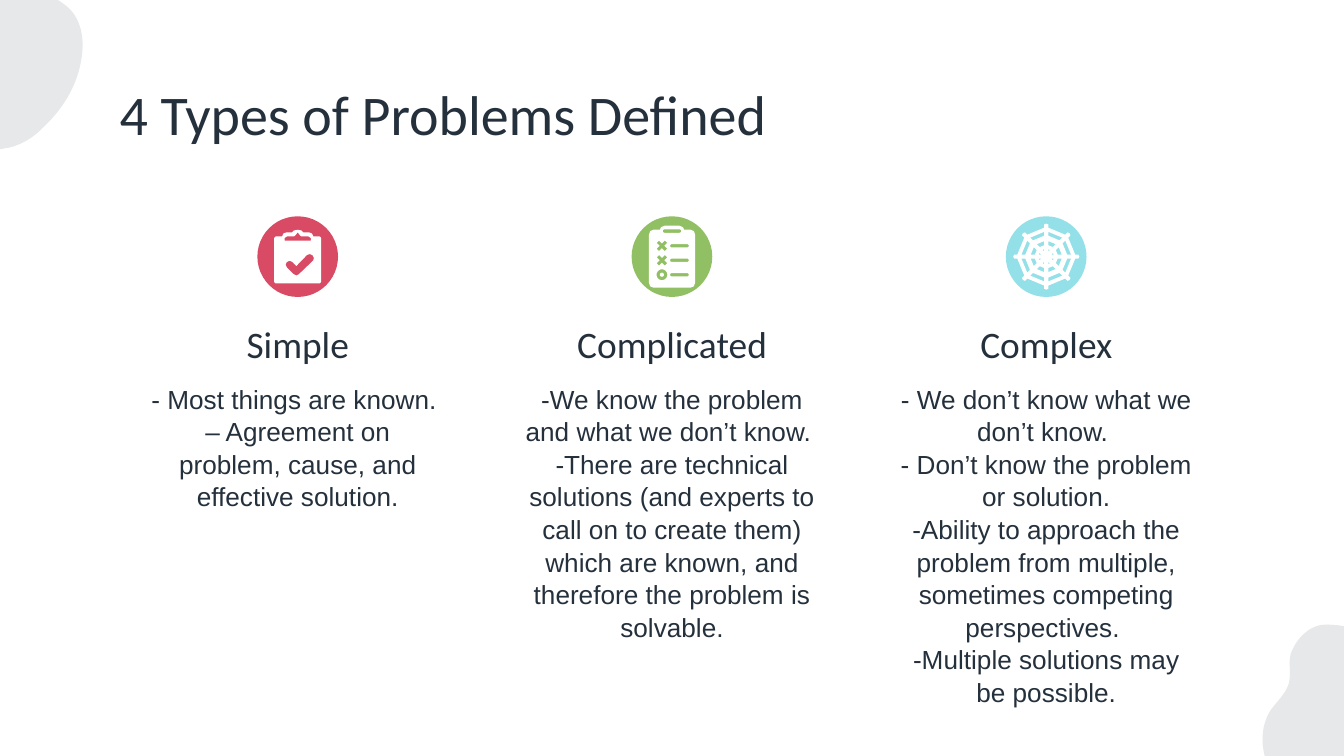
import math

import lxml.etree
import pptx
import pptx.dml.color
import pptx.enum.shapes
import pptx.enum.text
import pptx.oxml.ns
import pptx.util

Pt = pptx.util.Pt
ALIGN = pptx.enum.text.PP_ALIGN
ANCHOR = pptx.enum.text.MSO_ANCHOR

COLORS = {"ink": "24303C", "white": "FFFFFF", "simple": "D94A64",
          "complicated": "91BF63", "complex": "93E0E8"}

# Column grid
CENTER, STEP, COLUMN_WIDTH = 360, 200.5, 171.4
ICON_Y, ICON_SIZE = 137.5, 43.2

TITLE = {"size": 30, "font": "Calibri", "align": ALIGN.LEFT, "anchor": ANCHOR.TOP}
HEADING = {"size": 20, "font": "Calibri", "align": ALIGN.CENTER, "anchor": ANCHOR.BOTTOM}
BODY = {"size": 14, "font": "Arial", "align": ALIGN.CENTER, "anchor": ANCHOR.TOP,
        "spacing": 1.04}

# Corner blobs: a start point, then cubic curves; the corner closes each one
BOTTOM_BLOB = [(720, 335.5), [
    [(717.1, 334.8), (710.6, 334.5), (707.8, 334.8)],
    [(700.6, 336.2), (694.8, 342), (691.9, 349.2)],
    [(689.8, 354.2), (691.9, 360), (690.5, 365.8)],
    [(689, 371.5), (684, 375.8), (680.4, 380.9)],
    [(676.1, 388.1), (675.4, 396.7), (677.5, 405)]], (720, 405)]
TOP_BLOB = [(0, 79.9), [
    [(1.4, 79.9), (2.9, 79.2), (4.3, 79.2)],
    [(10.8, 77.8), (17.3, 74.2), (22.3, 69.1)],
    [(31, 61.2), (38.2, 51.1), (41.8, 39.6)],
    [(44.6, 30.2), (46.1, 18), (40.3, 8.6)],
    [(38.2, 5), (34.6, 2.2), (31, 0)]], (0, 0)]

# Clipboard outlines: right halves, measured from the icon centre
CLIPBOARD = [(0, -14.4), (2, -14), (3, -13), (6, -13), (7.6, -12.4), (8.4, -10.8),
             (11.8, -10.8), (12.6, -10), (12.6, 13.6), (11.8, 14.4)]
CLIP = [(0, -13), (1.4, -11.2), (2, -10.8), (5.8, -10.8), (7, -10), (7, -8.6)]
CHECK = [(6.5, -1.4), (8, -0.7), (8.7, 0.7), (8.3, 2.1), (0.7, 9.4), (-0.7, 10.1),
         (-2.2, 9.4), (-5.8, 5.8), (-6.5, 4.3), (-5.8, 2.9), (-4.3, 2.2),
         (-2.9, 2.9), (-0.7, 5), (5, -0.9)]
CHECKLIST = [(0, -16.6), (3.9, -16.6), (5.8, -15.8), (6.5, -14.4), (10, -14.4),
             (11.7, -13.7), (12.4, -11.6), (12.4, 13.9), (11.7, 15.9), (10, 16.6)]


# Geometry
def mirrored(half):
    return half + [(-x, y) for x, y in reversed(half)]


def spoke_point(degrees, along, across=0):
    c, s = math.cos(math.radians(degrees)), math.sin(math.radians(degrees))
    return along * c - across * s, along * s + across * c


def arc(x, y, radius, start, end):
    points = [spoke_point(a, radius) for a in range(start, end, 15)]
    return [(x + dx, y + dy) for dx, dy in points]


def pill(left, right, y, radius=0.9):
    return (arc(right - radius, y, radius, -90, 91)
            + arc(left + radius, y, radius, 90, 271))


def cross(x, y, reach=3.1, half=0.9):
    points = []
    for a in range(45, 405, 90):
        points += [spoke_point(a, reach, -half), spoke_point(a, reach, half),
                   spoke_point(a + 45, half * math.sqrt(2))]
    return [(x + dx, y + dy) for dx, dy in points]


def curved(start, curves, corner, steps=16):
    points = [start]
    for p1, p2, p3 in curves:
        p0 = points[-1]
        for t in (i / steps for i in range(1, steps + 1)):
            points.append(tuple(
                (1 - t) ** 3 * a + 3 * (1 - t) ** 2 * t * b + 3 * (1 - t) * t * t * c + t ** 3 * d
                for a, b, c, d in zip(p0, p1, p2, p3)))
    return points + [corner]


def simple_icon():
    return [mirrored(CLIPBOARD), mirrored(CLIP), CHECK]


def complicated_icon():
    rows = [-5.8, 1.95, 9.7]
    return ([mirrored(CHECKLIST), pill(-4.9, 4.9, -13.7)]
            + [pill(-1, 9, y) for y in rows]
            + [cross(-5.4, y) for y in rows[:2]]
            + [arc(-5.4, rows[2], 2.9, 0, 360)])


def complex_icon(half=1.1):
    angles = range(0, 360, 45)
    edge = [(15.5, -half), (17.2, -half), (17.7, 0), (17.2, half), (15.5, half)]
    web = [[spoke_point(a, *p) for a in angles for p in edge]]
    for outer, inner in [(13.3, 11.2), (8.3, 6.1), (4, 2.7)]:
        web += [[spoke_point(a, outer, half), spoke_point(a + 45, outer, -half),
                 spoke_point(a + 45, inner, -half), spoke_point(a, inner, half)]
                for a in angles]
    return web


# Elements
def rgb(name):
    return pptx.dml.color.RGBColor.from_string(COLORS[name])


def paint(shape, color, alpha=None):
    shape.shadow.inherit = False
    shape.fill.solid()
    shape.fill.fore_color.rgb = rgb(color)
    shape.line.fill.background()
    if alpha:
        fill = shape.fill._xPr.find(".//" + pptx.oxml.ns.qn("a:srgbClr"))
        lxml.etree.SubElement(fill, pptx.oxml.ns.qn("a:alpha"), val=str(alpha * 1000))


def add_outline(slide, contours, color, x=0, y=0, alpha=None):
    placed = [[(Pt(x + dx), Pt(y + dy)) for dx, dy in points] for points in contours]
    builder = slide.shapes.build_freeform(*placed[0][0])
    builder.add_line_segments(placed[0][1:], close=True)
    for points in placed[1:]:
        builder.move_to(*points[0])
        builder.add_line_segments(points[1:], close=True)
    paint(builder.convert_to_shape(), color, alpha)


def add_disc(slide, x, y, size, color):
    disc = slide.shapes.add_shape(pptx.enum.shapes.MSO_SHAPE.OVAL, Pt(x - size / 2),
                                  Pt(y - size / 2), Pt(size), Pt(size))
    paint(disc, color)


def write(shape, lines, style):
    frame = shape.text_frame
    layout = {"word_wrap": True, "auto_size": pptx.enum.text.MSO_AUTO_SIZE.NONE,
              "vertical_anchor": style["anchor"]}
    layout.update({f"margin_{side}": Pt(7.2) for side in ("left", "top", "right", "bottom")})
    for name, value in layout.items():
        setattr(frame, name, value)
    for i, line in enumerate(lines):
        paragraph = frame.add_paragraph() if i else frame.paragraphs[0]
        paragraph.alignment = style["align"]
        paragraph.line_spacing = style.get("spacing", 1.0)
        run = paragraph.add_run()
        run.text = line
        for name, value in {"size": Pt(style["size"]), "name": style["font"]}.items():
            setattr(run.font, name, value)
        run.font.color.rgb = rgb("ink")


def add_text(slide, x, y, height, lines, style):
    box = slide.shapes.add_textbox(Pt(x - COLUMN_WIDTH / 2), Pt(y), Pt(COLUMN_WIDTH), Pt(height))
    write(box, lines, style)


def main():
    deck = pptx.Presentation()
    deck.slide_width, deck.slide_height = Pt(720), Pt(405)
    slide = deck.slides.add_slide(deck.slide_layouts[5])

    # Corner blobs
    for blob in (BOTTOM_BLOB, TOP_BLOB):
        add_outline(slide, [curved(*blob)], "ink", alpha=11)

    # Title
    title = slide.shapes.title
    for name, value in {"left": 56.9, "top": 35.3, "width": 607, "height": 45.4}.items():
        setattr(title, name, Pt(value))
    write(title, ["4 Types of Problems Defined"], TITLE)

    # Problem types
    columns = [
        ("Simple", simple_icon(), [
            "- Most things are known. ",
            "– Agreement on problem, cause, and effective solution."]),
        ("Complicated", complicated_icon(), [
            "-We know the problem and what we don’t know. ",
            "-There are technical solutions (and experts to call on to create them) "
            "which are known, and therefore the problem is solvable."]),
        ("Complex", complex_icon(), [
            "- We don’t know what we don’t know. ",
            "- Don’t know the problem or solution.",
            "-Ability to approach the problem from multiple, sometimes competing perspectives. ",
            "-Multiple solutions may be possible."])]
    for i, (heading, icon, lines) in enumerate(columns):
        x = CENTER + (i - 1) * STEP
        add_text(slide, x, 197.3, 79.9, lines, BODY)
        add_text(slide, x, 159.1, 43.9, [heading], HEADING)
        add_disc(slide, x, ICON_Y, ICON_SIZE, heading.lower())
        add_outline(slide, icon, "white", x, ICON_Y)

    # Dot in the last checklist mark
    add_disc(slide, CENTER - 5.4, ICON_Y + 9.7, 2.2, "white")
    deck.save("out.pptx")


if __name__ == "__main__":
    main()
